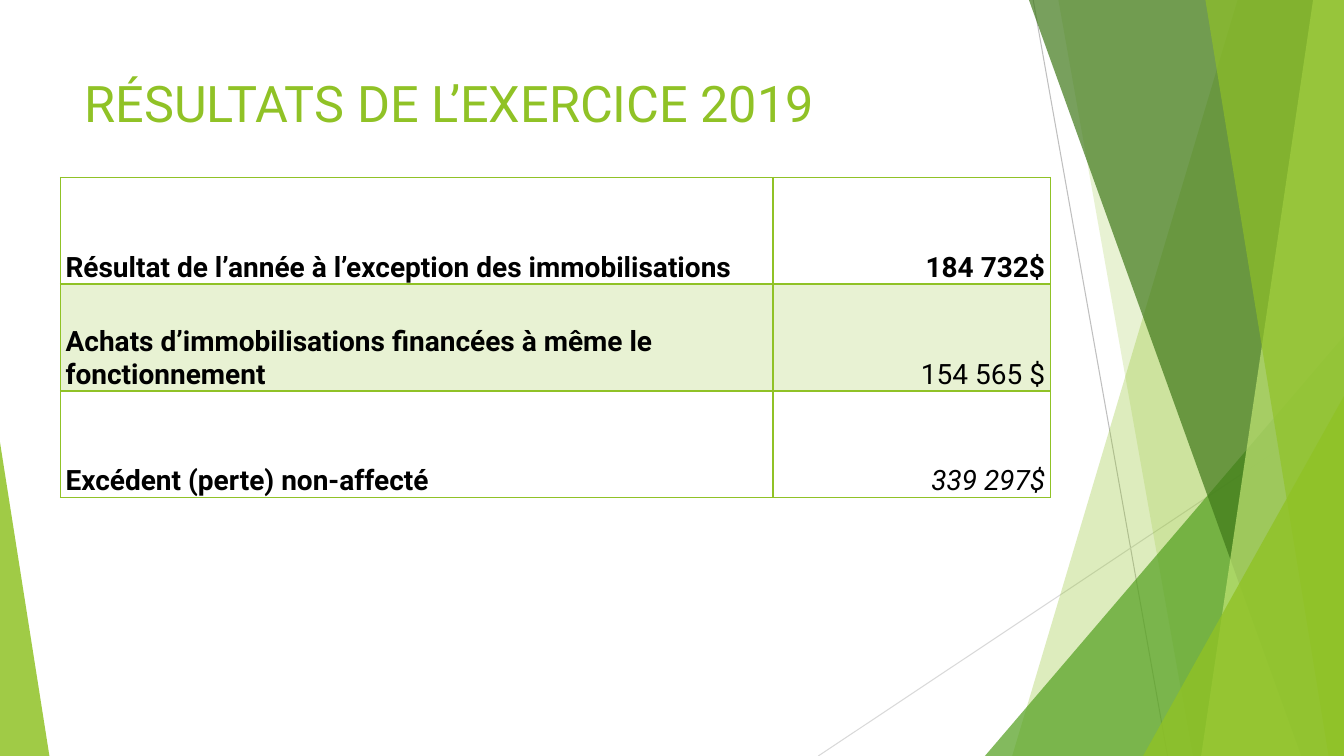
from lxml import etree
from pptx import Presentation
from pptx.dml.color import RGBColor
from pptx.enum.shapes import MSO_CONNECTOR, MSO_SHAPE
from pptx.enum.text import MSO_ANCHOR, PP_ALIGN
from pptx.oxml.ns import qn
from pptx.util import Pt

TRI, LINE = MSO_SHAPE.ISOSCELES_TRIANGLE, MSO_CONNECTOR.STRAIGHT
TOP, BOTTOM = MSO_ANCHOR.TOP, MSO_ANCHOR.BOTTOM
LEFT, RIGHT = PP_ALIGN.LEFT, PP_ALIGN.RIGHT

# Content
WIDE, HIGH = 960, 540
FONT, GREEN, BLACK = "Roboto", "90C226", "000000"
TITLE = "RÉSULTATS DE L’EXERCICE 2019"
BOLD, PLAIN, ITALIC = {"bold": True}, {"bold": False}, {"bold": False, "italic": True}
ROWS = [
    ("Résultat de l’année à l’exception des immobilisations", "184 732$", BOLD),
    ("Achats d’immobilisations financées à même le fonctionnement", "154 565 $", PLAIN),
    ("Excédent (perte) non-affecté", "339 297$", ITALIC),
]
COLS, ROW_H = (509, 198), 76.3
RULES = [((738, 0), (834, HIGH), "BFBFBF"), ((WIDE, 290), (584.5, HIGH), "D9D9D9")]
# Bands reach the right edge: top x, bottom x, colour, opacity
# Wedges: left, top, width, apex, colour, opacity
DECOR = [
    ("band", 884, 723, GREEN, 30),
    ("band", 756, 852, GREEN, 20),
    ("wedge", 703.5, 240, 256.5, 1, "54A021", 72),
    ("band", 735, 929.5, "3F7819", 70),
    ("band", 938, 858, "C0E474", 70),
    ("band", 861, 949, GREEN, 65),
    ("wedge", 816.5, 283, 143.5, 1, GREEN, 80),
    ("wedge", 0, 316, 35.3, 0, GREEN, 85),
]


def rgb(code):
    return RGBColor.from_string(code)


def paint(fill, props, code, alpha):
    fill.solid()
    fill.fore_color.rgb = rgb(code)
    tone = props.find(qn("a:solidFill") + "/" + qn("a:srgbClr"))
    etree.SubElement(tone, qn("a:alpha"), val=str(alpha * 1000))


def write(frame, text, size, code, align=LEFT, style=PLAIN):
    para = frame.paragraphs[0]
    para.alignment = align
    run = para.add_run()
    run.text = text
    run.font.color.rgb = rgb(code)
    for key, val in {"name": FONT, "size": Pt(size), **style}.items():
        setattr(run.font, key, val)


def border(cell, side, width):
    props = cell._tc.get_or_add_tcPr()
    edge = etree.SubElement(props, qn("a:ln" + side), w=str(Pt(width)))
    fill = etree.SubElement(edge, qn("a:solidFill"))
    etree.SubElement(fill, qn("a:srgbClr"), val=GREEN)


deck = Presentation()
deck.slide_width, deck.slide_height = Pt(WIDE), Pt(HIGH)
slide = deck.slides.add_slide(deck.slide_layouts[6])
shapes = slide.shapes

# Thin rules
for start, end, code in RULES:
    rule = shapes.add_connector(LINE, *map(Pt, start + end))
    rule.line.color.rgb = rgb(code)
    rule.line.width = Pt(0.75)
    etree.SubElement(rule._element.spPr, qn("a:effectLst"))

# Green bands and wedges
for kind, *place, code, alpha in DECOR:
    if kind == "band":
        top, base = place
        path = shapes.build_freeform(Pt(top), 0)
        spots = [(WIDE, 0), (WIDE, HIGH), (base, HIGH)]
        path.add_line_segments([(Pt(x), Pt(y)) for x, y in spots])
        shape = path.convert_to_shape()
    else:
        x, y, width, apex = place
        shape = shapes.add_shape(TRI, Pt(x), Pt(y), Pt(width), Pt(HIGH - y))
        shape.adjustments[0] = apex
    shape.shadow.inherit = False
    shape.line.fill.background()
    paint(shape.fill, shape._element.spPr, code, alpha)

# Title
box = shapes.add_textbox(Pt(53.3), Pt(48.2), Pt(677), Pt(103.7))
box.text_frame.word_wrap = True
box.text_frame.vertical_anchor = TOP
write(box.text_frame, TITLE, 36, GREEN)

# Results table
table = shapes.add_table(len(ROWS), len(COLS), Pt(43.2), Pt(126.7),
                         Pt(sum(COLS)), Pt(ROW_H * len(ROWS))).table
table.first_row = table.horz_banding = False
for col, width in zip(table.columns, COLS):
    col.width = Pt(width)
FORMAT = {"vertical_anchor": BOTTOM, "margin_left": Pt(3.6), "margin_right": Pt(3.6),
          "margin_top": 0, "margin_bottom": 0}
for r, (label, sum_text, style) in enumerate(ROWS):
    table.rows[r].height = Pt(ROW_H)
    parts = [(label, LEFT, BOLD), (sum_text, RIGHT, style)]
    for c, (text, align, look) in enumerate(parts):
        cell = table.cell(r, c)
        for key, val in FORMAT.items():
            setattr(cell, key, val)
        write(cell.text_frame, text, 20, BLACK, align, look)
        thick = {(0, "B"), (1, "T")}
        for side in "LRTB":
            border(cell, side, 2 if (r, side) in thick else 1)
        if r % 2:
            paint(cell.fill, cell._tc.get_or_add_tcPr(), GREEN, 20)
        else:
            cell.fill.background()

deck.save("out.pptx")
